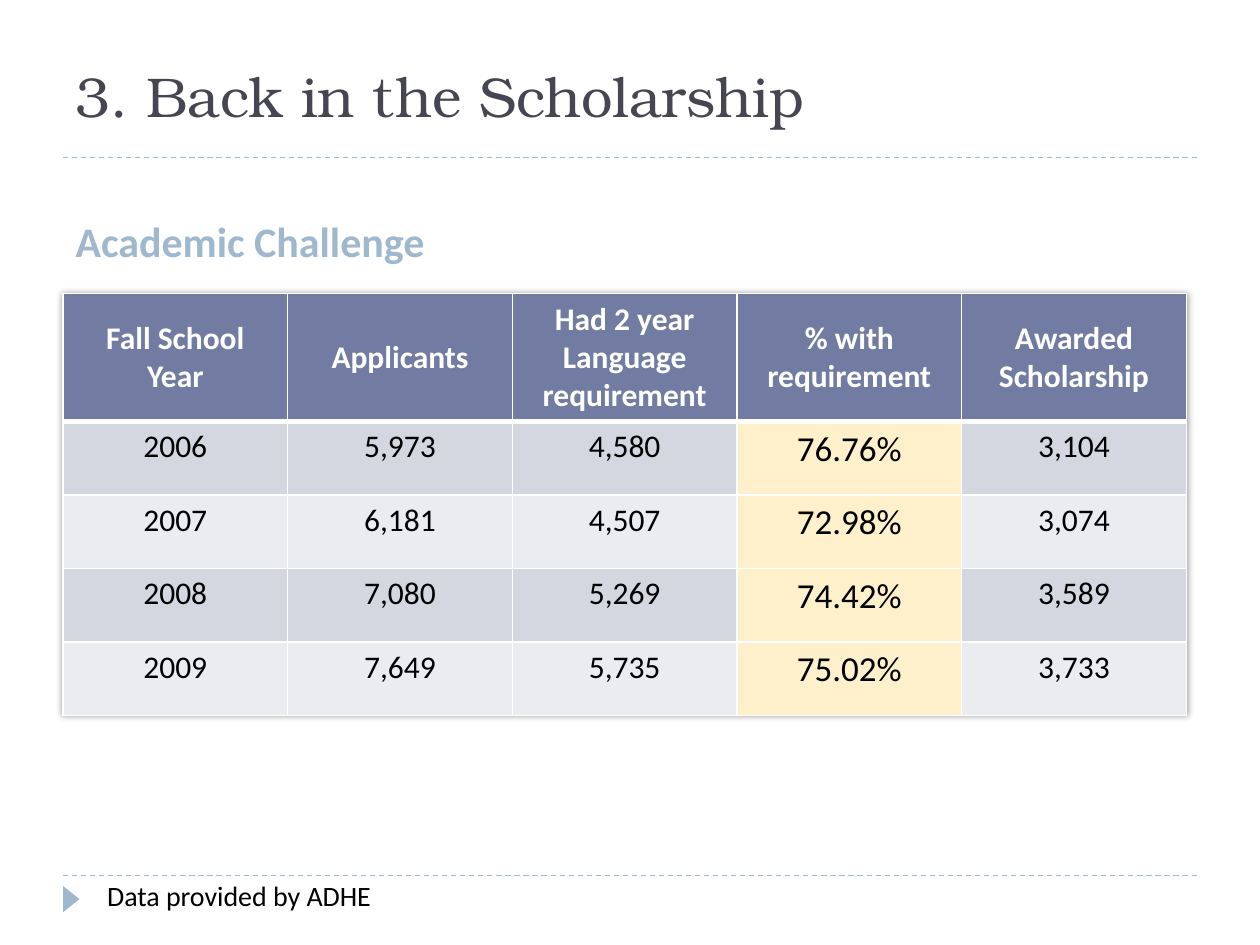
from lxml import etree
from pptx import Presentation
from pptx.dml.color import RGBColor
from pptx.enum.dml import MSO_LINE
from pptx.enum.shapes import MSO_CONNECTOR, MSO_SHAPE
from pptx.enum.text import MSO_ANCHOR, PP_ALIGN
from pptx.oxml import parse_xml
from pptx.oxml.ns import nsdecls, qn
from pptx.util import Cm, Pt

STRAIGHT, TRIANGLE, DASH = MSO_CONNECTOR.STRAIGHT, MSO_SHAPE.ISOSCELES_TRIANGLE, MSO_LINE.DASH
TOP, MIDDLE, BOTTOM = MSO_ANCHOR.TOP, MSO_ANCHOR.MIDDLE, MSO_ANCHOR.BOTTOM
LEFT, CENTER = PP_ALIGN.LEFT, PP_ALIGN.CENTER

WHITE = RGBColor(0xFF, 0xFF, 0xFF)
BLACK = RGBColor(0x00, 0x00, 0x00)
INK = RGBColor(0x46, 0x46, 0x53)
SKY = RGBColor(0x9F, 0xB8, 0xCD)
INDIGO = RGBColor(0x72, 0x7C, 0xA3)
CREAM = RGBColor(0xFD, 0xF0, 0xCA)
BANDS = (RGBColor(0xD5, 0xD7, 0xE0), RGBColor(0xEB, 0xEC, 0xF0))

SERIF, SANS = "TeX Gyre Bonum", "Calibri"
PERCENT_COL = 3
ROWS = (
    ("Fall School Year", "Applicants", "Had 2 year Language requirement",
     "% with requirement", "Awarded Scholarship"),
    ("2006", "5,973", "4,580", "76.76%", "3,104"),
    ("2007", "6,181", "4,507", "72.98%", "3,074"),
    ("2008", "7,080", "5,269", "74.42%", "3,589"),
    ("2009", "7,649", "5,735", "75.02%", "3,733"),
)


def write(tf, text, font, size, color, bold=False, align=LEFT, anchor=TOP):
    """Fill a text frame with one formatted paragraph and return it."""
    tf.word_wrap = True
    tf.vertical_anchor = anchor
    p = tf.paragraphs[0]
    p.text = text
    p.alignment = align
    f = p.font
    f.name, f.size, f.bold = font, Pt(size), bold
    f.color.rgb = color
    return p


def place(sp, x, y, w, h):
    """Move a shape to a box given in centimetres."""
    sp.left, sp.top, sp.width, sp.height = Cm(x), Cm(y), Cm(w), Cm(h)


def add_rule(s, x, y, w):
    """Draw a dashed horizontal rule."""
    line = s.shapes.add_connector(STRAIGHT, Cm(x), Cm(y), Cm(x + w), Cm(y))
    line.line.color.rgb = SKY
    line.line.width = Pt(0.75)
    line.line.dash_style = DASH
    etree.SubElement(line._element.spPr, qn("a:effectLst"))


def add_heading(s, x, y, w, h):
    """Place the title with a rule along the bottom of its box."""
    add_rule(s, x, y + h, w)
    place(s.shapes.title, x, y, w, h)
    write(s.shapes.title.text_frame, "3. Back in the Scholarship", SERIF, 32, INK, anchor=MIDDLE)


def add_subheading(s, x, y, w, h):
    """Place the body placeholder as an unbulleted subheading."""
    body = s.placeholders[1]
    place(body, x, y, w, h)
    p = write(body.text_frame, "Academic Challenge", SANS, 24, SKY, bold=True, anchor=BOTTOM)
    p.space_before = Pt(6)
    pPr = p._p.get_or_add_pPr()
    pPr.set("marL", "0")
    pPr.set("indent", "0")
    pPr.insert_element_before(parse_xml(f"<a:buNone {nsdecls('a')}/>"), "a:tabLst", "a:defRPr")


def set_borders(cell, **widths):
    """Give a cell white borders, with widths in points by side."""
    tcPr = cell._tc.get_or_add_tcPr()
    for i, side in enumerate("LRTB"):
        tcPr.insert(i, parse_xml(
            f'<a:ln{side} {nsdecls("a")} w="{Pt(widths.get(side, 1))}">'
            f'<a:solidFill><a:srgbClr val="{WHITE}"/></a:solidFill></a:ln{side}>'))


def add_scholarship_table(s, x, y, w, header_h, row_h):
    """Build the yearly scholarship table with a soft shadow."""
    n = len(ROWS)
    h = header_h + (n - 1) * row_h
    table = s.shapes.add_table(n, len(ROWS[0]), Cm(x), Cm(y), Cm(w), Cm(h)).table
    table._tbl.tblPr.insert(0, parse_xml(
        f'<a:effectLst {nsdecls("a")}><a:outerShdw blurRad="50800" dist="0" dir="0">'
        '<a:srgbClr val="000000"><a:alpha val="40000"/></a:srgbClr>'
        '</a:outerShdw></a:effectLst>'))
    for i, row in enumerate(ROWS):
        table.rows[i].height = Cm(row_h if i else header_h)
        for j, text in enumerate(row):
            cell = table.cell(i, j)
            percent = i > 0 and j == PERCENT_COL
            cell.fill.solid()
            if i == 0:
                cell.fill.fore_color.rgb = INDIGO
                set_borders(cell, B=3)
            else:
                cell.fill.fore_color.rgb = CREAM if percent else BANDS[(i - 1) % 2]
                set_borders(cell, T=3 if i == 1 else 1)
            write(cell.text_frame, text, SANS, 20 if percent else 18,
                  BLACK if i else WHITE, bold=i == 0, align=CENTER)
            cell.vertical_anchor = TOP if i else MIDDLE


def add_footer(s, x, y, w):
    """Place the footer rule, its pointer and the data credit."""
    add_rule(s, x, y, w)
    sp = s.shapes.add_shape(TRIANGLE, Cm(x - 0.1), Cm(y + 0.31), Cm(0.53), Cm(0.33))
    sp.rotation = 90
    sp.shadow.inherit = False
    sp.fill.solid()
    sp.fill.fore_color.rgb = SKY
    sp.line.fill.background()
    box = s.shapes.add_textbox(Cm(x + 0.64), Cm(y - 0.07), Cm(w - 0.64), Cm(0.94))
    write(box.text_frame, "Data provided by ADHE", SANS, 16, BLACK)


def main():
    """Build and save the slide."""
    prs = Presentation()
    prs.slide_width, prs.slide_height = Cm(25.4), Cm(19.05)
    s = prs.slides.add_slide(prs.slide_layouts[1])
    add_heading(s, 1.27, 0.64, 22.86, 2.54)
    add_subheading(s, 1.27, 3.58, 11.23, 1.9)
    add_scholarship_table(s, 1.27, 5.92, 22.65, 2.54, 1.48)
    add_footer(s, 1.27, 17.65, 22.86)
    prs.save("out.pptx")


if __name__ == "__main__":
    main()
